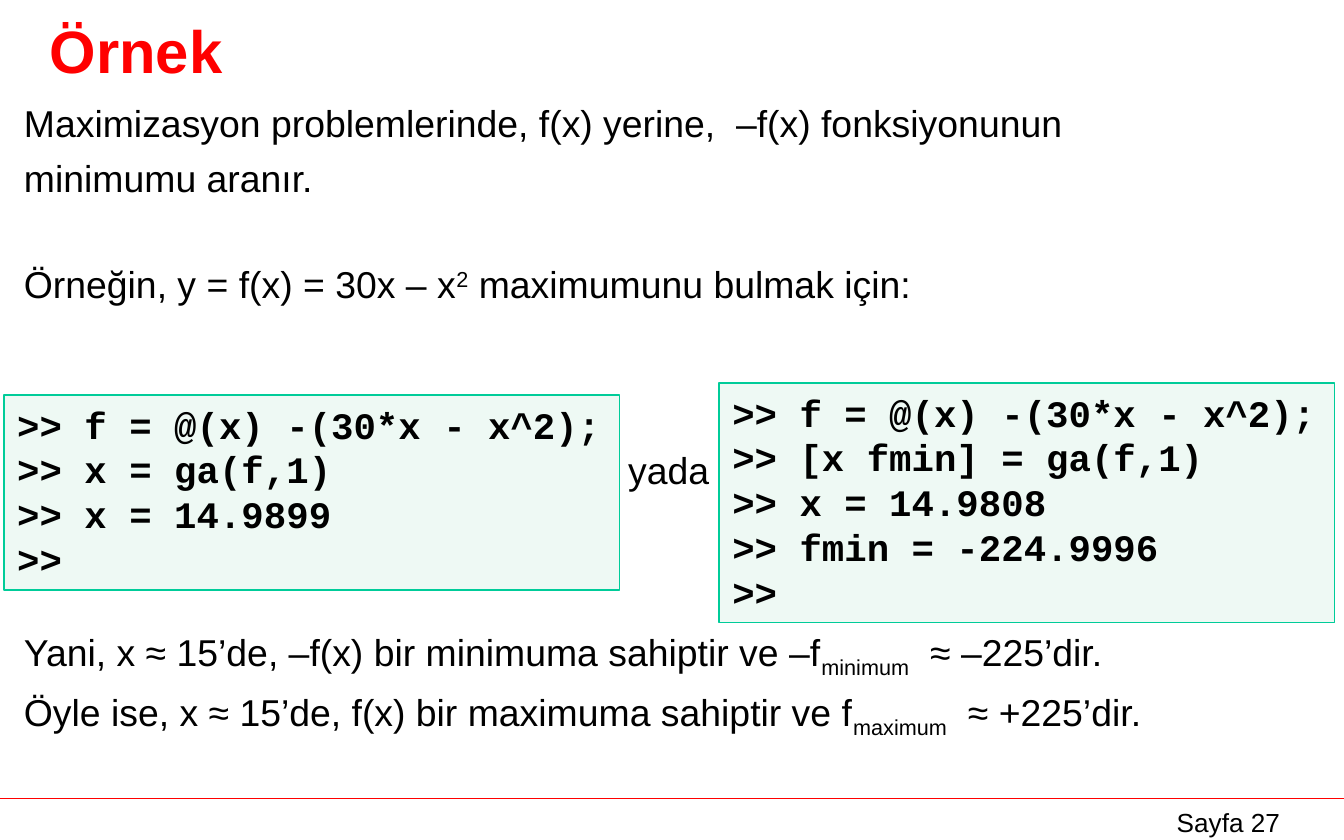
from lxml.etree import SubElement
from pptx import Presentation
from pptx.dml.color import RGBColor
from pptx.enum.shapes import MSO_CONNECTOR, MSO_SHAPE
from pptx.enum.text import MSO_ANCHOR, MSO_AUTO_SIZE, PP_ALIGN
from pptx.oxml.ns import qn
from pptx.util import Inches, Pt

COLORS = {"accent": "FF0000", "text": "000000", "code_fill": "EEF9F4", "code_line": "00CC99"}
BODY = {"name": "Arial", "size": Pt(20), "bold": False}
HEADING = {"name": "Arial", "size": Pt(32), "bold": True}
CODE = {"name": "Courier New", "size": Pt(20), "bold": True}
FOOTER = {"name": "Arial", "size": Pt(14), "bold": False}


class SlideBuilder:
    def __init__(self, slide):
        self.slide = slide

    def color(self, key):
        return RGBColor.from_string(COLORS[key])

    def add_runs(self, paragraph, pieces, style, color="text", align=PP_ALIGN.LEFT):
        paragraph.alignment = align
        for content, baseline in pieces:
            run = paragraph.add_run()
            run.text = content
            for attribute, value in style.items():
                setattr(run.font, attribute, value)
            run.font.color.rgb = self.color(color)
            if baseline:
                run._r.get_or_add_rPr().set("baseline", str(baseline * 1000))

    def fill_lines(self, frame, lines, style, align=PP_ALIGN.LEFT):
        for index, (pieces, gap) in enumerate(lines):
            paragraph = frame.add_paragraph() if index else frame.paragraphs[0]
            paragraph.space_before = Pt(gap)
            self.add_runs(paragraph, pieces, style, align=align)

    def title(self, content, box):
        heading = self.slide.shapes.title
        heading.left, heading.top, heading.width, heading.height = map(Inches, box)
        heading.text_frame.vertical_anchor = MSO_ANCHOR.MIDDLE
        heading.text_frame.auto_size = MSO_AUTO_SIZE.NONE
        self.add_runs(heading.text_frame.paragraphs[0], [(content, 0)], HEADING, "accent")

    def text(self, lines, box, style=BODY, align=PP_ALIGN.LEFT, wrap=True):
        frame = self.slide.shapes.add_textbox(*map(Inches, box)).text_frame
        frame.word_wrap = wrap
        self.fill_lines(frame, lines, style, align)

    def code(self, commands, box):
        panel = self.slide.shapes.add_shape(MSO_SHAPE.RECTANGLE, *map(Inches, box))
        panel.shadow.inherit = False
        panel.fill.solid()
        panel.fill.fore_color.rgb = self.color("code_fill")
        panel.line.color.rgb = self.color("code_line")
        panel.line.width = Pt(0.75)
        frame = panel.text_frame
        frame.word_wrap = False
        frame.auto_size = MSO_AUTO_SIZE.SHAPE_TO_FIT_TEXT
        frame.vertical_anchor = MSO_ANCHOR.TOP
        lines = [([(f">> {command}".rstrip(), 0)], 0) for command in commands]
        self.fill_lines(frame, lines, CODE)

    def rule(self, start, end):
        line = self.slide.shapes.add_connector(MSO_CONNECTOR.STRAIGHT, *map(Inches, start + end))
        line.line.color.rgb = self.color("accent")
        line.line.width = Pt(0.75)
        SubElement(line._element.spPr, qn("a:effectLst"))


def main():
    deck = Presentation()
    deck.slide_width, deck.slide_height = Inches(10), Inches(6.25)
    example = SlideBuilder(deck.slides.add_slide(deck.slide_layouts[5]))

    example.rule((0, 5.94), (10, 5.94))
    example.text([([("Sayfa 27", 0)], 0)], (8.39, 5.95, 1.5, 0.26), FOOTER, PP_ALIGN.CENTER)
    example.title("Örnek", (0.27, 0.04, 9.21, 0.66))

    explanation = [
        ([("Maximizasyon problemlerinde, f(x) yerine,  –f(x) fonksiyonunun", 0)], 5),
        ([("minimumu aranır.", 0)], 5),
        ([("Örneğin, y = f(x) = 30x – x", 0), ("2", 30), (" maximumunu bulmak için:", 0)], 33),
        ([("Yani, x ≈ 15’de, –f(x) bir minimuma sahiptir ve –f", 0),
          ("minimum", -25), ("  ≈ –225’dir.", 0)], 173),
        ([("Öyle ise, x ≈ 15’de, f(x) bir maximuma sahiptir ve f", 0),
          ("maximum", -25), ("  ≈ +225’dir.", 0)], 5),
    ]
    example.text(explanation, (0.08, 0.7, 9.53, 5.16))

    objective = "f = @(x) -(30*x - x^2);"
    example.code([objective, "x = ga(f,1)", "x = 14.9899", ""], (0.03, 2.94, 4.58, 1.45))
    example.code([objective, "[x fmin] = ga(f,1)", "x = 14.9808", "fmin = -224.9996", ""],
                 (5.35, 2.85, 4.58, 1.78))
    example.text([([("yada", 0)], 0)], (4.57, 3.28, 0.81, 0.44), align=PP_ALIGN.CENTER, wrap=False)

    deck.save("out.pptx")


if __name__ == "__main__":
    main()
